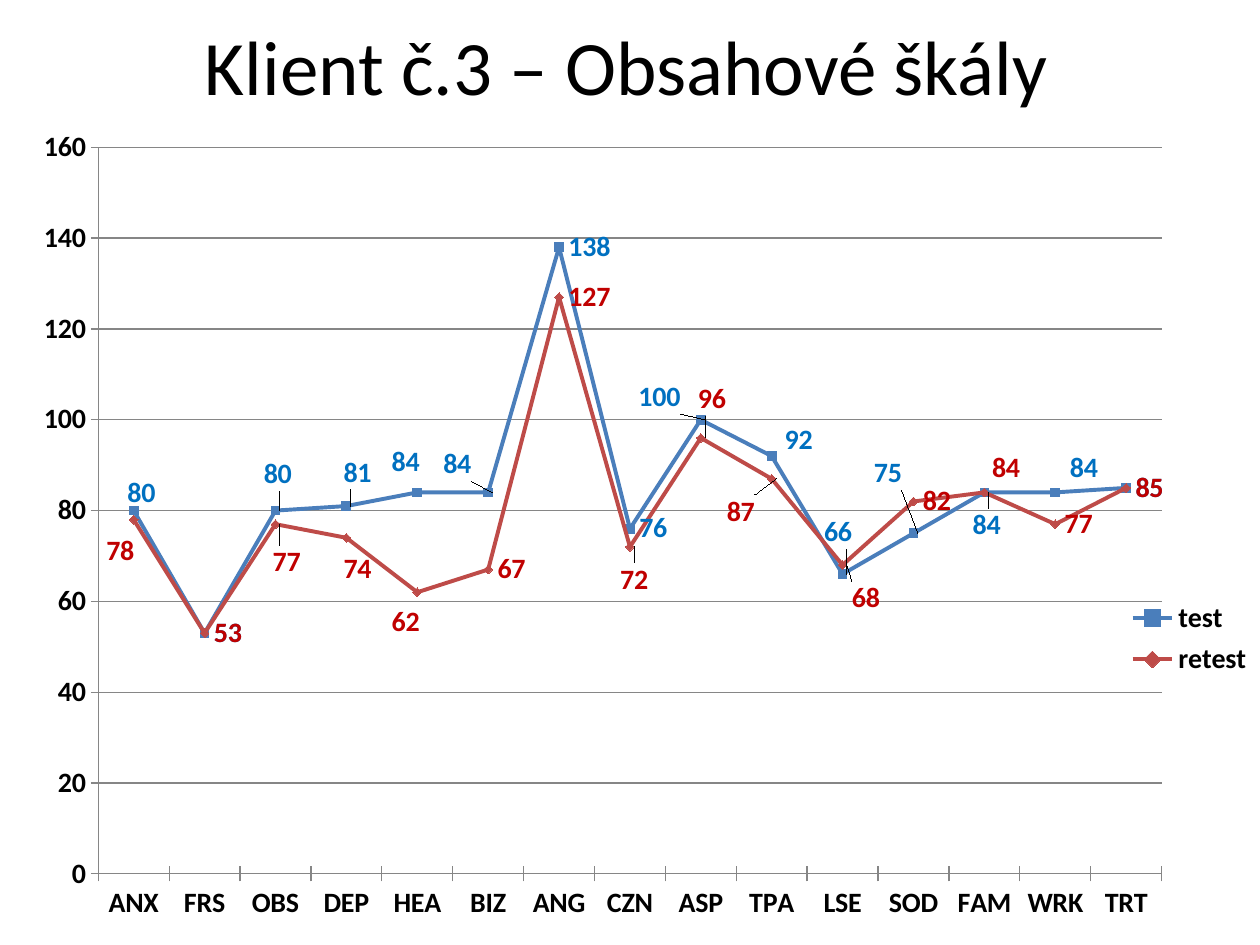
from lxml import etree
from pptx import Presentation
from pptx.chart.data import CategoryChartData
from pptx.dml.color import RGBColor
from pptx.enum.chart import (XL_CHART_TYPE, XL_LABEL_POSITION, XL_LEGEND_POSITION,
                             XL_MARKER_STYLE, XL_TICK_MARK)
from pptx.enum.text import MSO_ANCHOR, PP_ALIGN
from pptx.oxml.ns import qn
from pptx.util import Pt

LINE_MARKERS = XL_CHART_TYPE.LINE_MARKERS
LABEL_RIGHT = XL_LABEL_POSITION.RIGHT
LEGEND_RIGHT = XL_LEGEND_POSITION.RIGHT
SQUARE, DIAMOND = XL_MARKER_STYLE.SQUARE, XL_MARKER_STYLE.DIAMOND
CROSS = XL_TICK_MARK.CROSS
MIDDLE, CENTER = MSO_ANCHOR.MIDDLE, PP_ALIGN.CENTER

FONT = "Calibri"
CATEGORIES = ["ANX", "FRS", "OBS", "DEP", "HEA", "BIZ", "ANG", "CZN",
              "ASP", "TPA", "LSE", "SOD", "FAM", "WRK", "TRT"]
SERIES = [
    {"name": "test",
     "values": [80, 53, 80, 81, 84, 84, 138, 76, 100, 92, 66, 75, 84, 84, 85],
     "line": "4A7EBB", "fill": "4F81BD", "label": "0070C0", "marker": SQUARE,
     "shifts": {0: (-9, -10), 2: (-12, -21), 3: (-7, -19), 4: (-20, -17),
                5: (-31, -16), 8: (-41, -13), 9: (2, -9), 10: (-16, -24),
                11: (-28, -34), 12: (-12, 19), 13: (3, -14)}},
    {"name": "retest",
     "values": [78, 53, 77, 74, 62, 67, 127, 72, 96, 87, 68, 82, 84, 77, 85],
     "line": "BE4B48", "fill": "C0504D", "label": "C00000", "marker": DIAMOND,
     "shifts": {0: (-21, 18), 2: (-7, 22), 3: (-7, 18), 4: (-20, 17),
                7: (-11, 19), 8: (-7, -22), 9: (-31, 19), 10: (0, 19),
                12: (-1, -14)}},
]


def rgb(value):
    return RGBColor.from_string(value)


def style_font(font, size, color, bold):
    font.name = FONT
    font.size = Pt(size)
    font.bold = bold
    font.color.rgb = rgb(color)


def add_layout(before, **values):
    for old in before.getparent().findall(qn("c:layout")):
        before.getparent().remove(old)
    layout = etree.Element(qn("c:layout"))
    manual = etree.SubElement(layout, qn("c:manualLayout"))
    for tag, value in values.items():
        etree.SubElement(manual, qn("c:" + tag)).set("val", str(value))
    before.addprevious(layout)


def add_title(slide, text, left, top, width, height):
    s = slide.shapes.title
    s.left, s.top, s.width, s.height = Pt(left), Pt(top), Pt(width), Pt(height)
    tf = s.text_frame
    tf.vertical_anchor = MIDDLE
    p = tf.paragraphs[0]
    p.text = text
    p.alignment = CENTER
    style_font(p.font, 44, "000000", False)


def format_axis(axis):
    axis.major_tick_mark = CROSS
    axis.format.line.color.rgb = rgb("868686")
    style_font(axis.tick_labels.font, 16, "000000", True)


def format_series(series, item, width, height):
    series.smooth = False
    series.format.line.width = Pt(2.25)
    series.format.line.color.rgb = rgb(item["line"])
    marker = series.marker
    marker.style = item["marker"]
    marker.size = 5
    marker.format.fill.solid()
    marker.format.fill.fore_color.rgb = rgb(item["fill"])
    marker.format.line.color.rgb = rgb(item["line"])
    labels = series.data_labels
    labels.show_value = True
    labels.position = LABEL_RIGHT
    style_font(labels.font, 16, item["label"], True)
    for i, (dx, dy) in item["shifts"].items():
        label = series.points[i].data_label
        style_font(label.font, 16, item["label"], True)
        label.position = LABEL_RIGHT
    for label in series._element.iter(qn("c:dLbl")):
        idx = label.find(qn("c:idx"))
        dx, dy = item["shifts"][int(idx.get("val"))]
        add_layout(idx.getnext(), x=round(dx / width, 4), y=round(dy / height, 4))


def add_line_chart(slide, left, top, width, height):
    data = CategoryChartData()
    data.categories = CATEGORIES
    for item in SERIES:
        data.add_series(item["name"], item["values"])
    chart = slide.shapes.add_chart(LINE_MARKERS, Pt(left), Pt(top), Pt(width),
                                   Pt(height), data).chart
    chart.has_title = False
    style_font(chart.font, 10, "000000", False)
    format_axis(chart.category_axis)
    axis = chart.value_axis
    format_axis(axis)
    axis.minimum_scale, axis.maximum_scale, axis.major_unit = 0, 160, 20
    axis.major_gridlines.format.line.color.rgb = rgb("868686")
    plot = chart.plots[0]
    plot.vary_by_categories = False
    for series, item in zip(plot.series, SERIES):
        format_series(series, item, width, height)
    chart.has_legend = True
    legend = chart.legend
    legend.position = LEGEND_RIGHT
    legend.include_in_layout = False
    style_font(legend.font, 16, "000000", True)
    add_layout(legend._element.find(qn("c:overlay")), xMode="edge", yMode="edge",
               x=0.9, y=0.57, w=0.1, h=0.11)
    add_layout(plot._element, layoutTarget="inner", xMode="edge", yMode="edge",
               x=0.078, y=0.023, w=0.844, h=0.89)


def main():
    prs = Presentation()
    prs.slide_width, prs.slide_height = Pt(720), Pt(540)
    slide = prs.slides.add_slide(prs.slide_layouts[5])
    add_title(slide, "Klient č.3 – Obsahové škály", 34, 0, 648, 73.5)
    add_line_chart(slide, 0, 73.5, 720, 466.5)
    prs.save("out.pptx")


if __name__ == "__main__":
    main()
